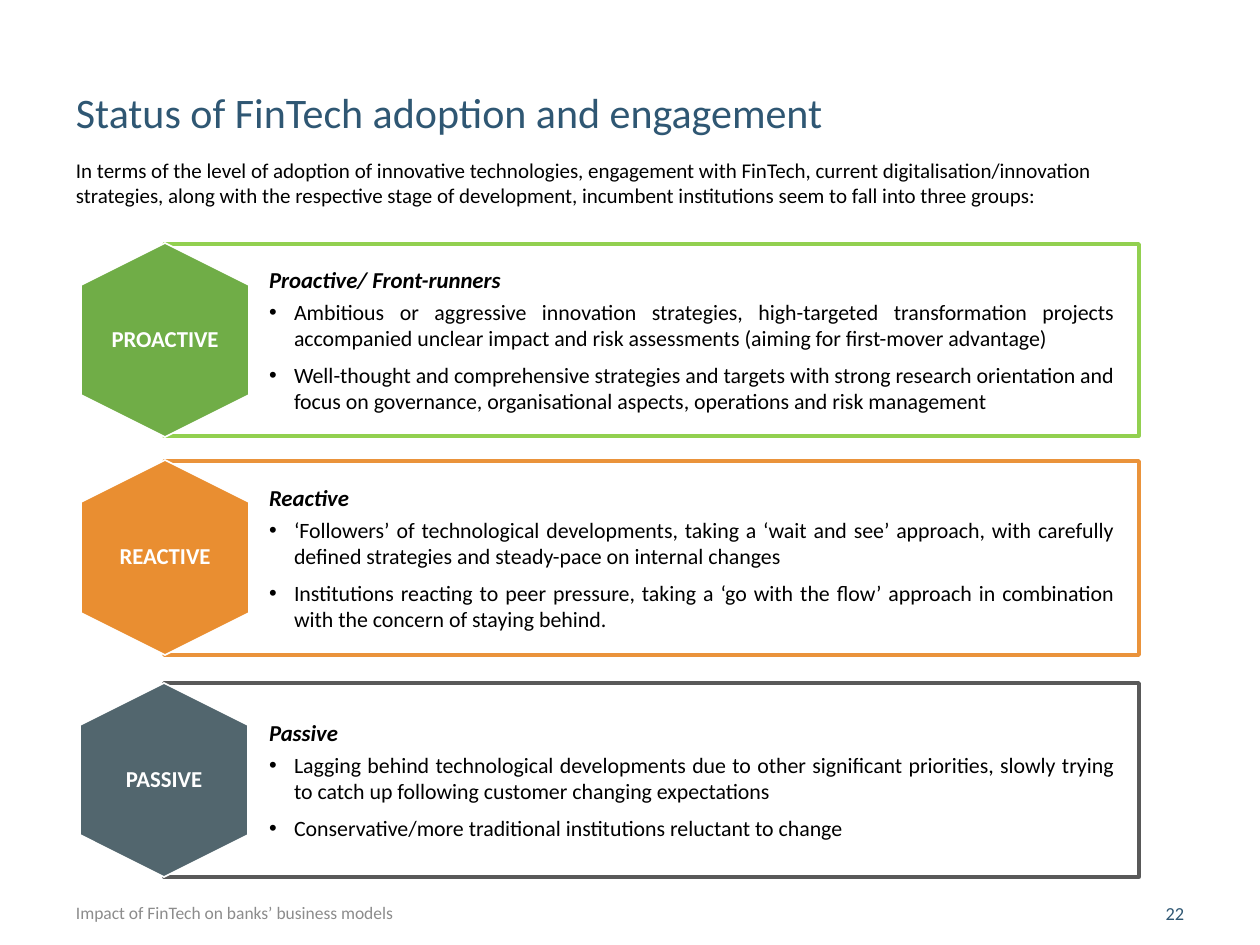
import pptx
import pptx.util
from pptx.dml.color import RGBColor
from pptx.enum.shapes import MSO_SHAPE
from pptx.enum.text import MSO_ANCHOR, PP_ALIGN
from lxml import etree

PX = 914400 / 126
FONT = "Calibri"
WHITE = RGBColor(0xFF, 0xFF, 0xFF)
BLACK = RGBColor(0, 0, 0)
NAVY = RGBColor(0x2F, 0x57, 0x73)
GREY = RGBColor(0x8C, 0x8C, 0x8C)
GREEN = RGBColor(0x70, 0xAD, 0x47)
LIME = RGBColor(0x92, 0xD0, 0x50)
ORANGE = RGBColor(0xE9, 0x8E, 0x31)
AMBER = RGBColor(0xEA, 0x93, 0x3B)
SLATE = RGBColor(0x52, 0x66, 0x6E)
CHARCOAL = RGBColor(0x59, 0x59, 0x59)

TITLE = "Status of FinTech adoption and engagement"
INTRO = ("In terms of the level of adoption of innovative technologies, engagement with FinTech, "
         "current digitalisation/innovation strategies, along with the respective stage of "
         "development, incumbent institutions seem to fall into three groups:")
FOOTER = "Impact of FinTech on banks’ business models"
PAGE_NUMBER = "22"

GROUPS = [
    {"label": "PROACTIVE", "fill": GREEN, "outline": LIME, "heading": "Proactive/ Front-runners",
     "panel": (244, 192), "hexagon": (81, 243, 194),
     "points": ["Ambitious or aggressive innovation strategies, high-targeted transformation projects "
                "accompanied unclear impact and risk assessments (aiming for first-mover advantage)",
                "Well-thought and comprehensive strategies and targets with strong research orientation "
                "and focus on governance, organisational aspects, operations and risk management"]},
    {"label": "REACTIVE", "fill": ORANGE, "outline": AMBER, "heading": "Reactive",
     "panel": (461, 194), "hexagon": (81, 460, 195),
     "points": ["‘Followers’ of technological developments, taking a ‘wait and see’ approach, with "
                "carefully defined strategies and steady-pace on internal changes",
                "Institutions reacting to peer pressure, taking a ‘go with the flow’ approach in "
                "combination with the concern of staying behind."]},
    {"label": "PASSIVE", "fill": SLATE, "outline": CHARCOAL, "heading": "Passive",
     "panel": (683, 194), "hexagon": (80, 683, 194),
     "points": ["Lagging behind technological developments due to other significant priorities, slowly "
                "trying to catch up following customer changing expectations",
                "Conservative/more traditional institutions reluctant to change"]},
]
PANEL_LEFT, PANEL_WIDTH = 164, 975
HEX_WIDTH, HEX_SHOULDER = 168, 42
BULLET_INDENT = 25


def emu(px):
    return round(px * PX)


def apply(target, formats):
    for name, value in formats.items():
        setattr(target, name, value)


def set_frame(shape, anchor, insets=(13, 6, 13, 6)):
    frame = shape.text_frame
    sides = ("margin_left", "margin_top", "margin_right", "margin_bottom")
    apply(frame, dict(zip(sides, map(emu, insets)), word_wrap=True, vertical_anchor=anchor))
    return frame


def write(para, text, size, color, bold=False, italic=False, **formats):
    apply(para, formats)
    span = para.add_run()
    span.text = text
    apply(span.font, {"name": FONT, "size": pptx.util.Pt(size), "bold": bold, "italic": italic})
    span.font.color.rgb = color


def paint(shape, fill, outline=None, weight=1):
    shape.shadow.inherit = False
    shape.fill.solid()
    shape.fill.fore_color.rgb = fill
    if outline is None:
        shape.line.fill.background()
    else:
        shape.line.color.rgb = outline
        shape.line.width = pptx.util.Pt(weight)


def add_bullet(para):
    props = para._p.get_or_add_pPr()
    props.set("marL", str(emu(BULLET_INDENT)))
    props.set("indent", str(-emu(BULLET_INDENT)))
    for tag, key, value in (("buFont", "typeface", "Arial"), ("buChar", "char", "•")):
        etree.SubElement(props, pptx.oxml.ns.qn("a:" + tag)).set(key, value)


def add_label(page, area, text, size, color, align=PP_ALIGN.LEFT):
    box = page.shapes.add_textbox(*map(emu, area))
    frame = set_frame(box, MSO_ANCHOR.TOP)
    write(frame.paragraphs[0], text, size, color, alignment=align)


def add_panel(page, group):
    top, height = group["panel"]
    area = (PANEL_LEFT, top, PANEL_WIDTH, height)
    panel = page.shapes.add_shape(MSO_SHAPE.RECTANGLE, *map(emu, area))
    paint(panel, WHITE, group["outline"], 2)
    frame = set_frame(panel, MSO_ANCHOR.MIDDLE, (105, 25, 25, 25))
    write(frame.paragraphs[0], group["heading"], 13, BLACK, True, True, alignment=PP_ALIGN.JUSTIFY)
    for point in group["points"]:
        para = frame.add_paragraph()
        add_bullet(para)
        write(para, point, 12.5, BLACK, alignment=PP_ALIGN.JUSTIFY,
              space_before=pptx.util.Pt(3), space_after=pptx.util.Pt(3))


def add_hexagon(page, group):
    left, top, height = group["hexagon"]
    middle, right, bottom = left + HEX_WIDTH // 2, left + HEX_WIDTH, top + height
    upper, lower = top + HEX_SHOULDER, bottom - HEX_SHOULDER
    builder = page.shapes.build_freeform(middle, top, scale=PX)
    builder.add_line_segments([(right, upper), (right, lower), (middle, bottom),
                               (left, lower), (left, upper)], close=True)
    hexagon = builder.convert_to_shape()
    paint(hexagon, group["fill"], WHITE)
    frame = set_frame(hexagon, MSO_ANCHOR.MIDDLE, (29, 33, 29, 33))
    write(frame.paragraphs[0], group["label"], 13, WHITE, True, alignment=PP_ALIGN.CENTER,
          line_spacing=0.9, space_after=pptx.util.Pt(6.3))


def main():
    deck = pptx.Presentation()
    apply(deck, {"slide_width": emu(1260), "slide_height": emu(945)})
    page = deck.slides.add_slide(deck.slide_layouts[6])

    add_label(page, (63, 81, 971, 77), TITLE, 24, NAVY)
    intro = page.shapes.add_shape(MSO_SHAPE.RECTANGLE, *map(emu, (63, 154, 1077, 58)))
    paint(intro, WHITE)
    frame = set_frame(intro, MSO_ANCHOR.MIDDLE)
    write(frame.paragraphs[0], INTRO, 12, BLACK, alignment=PP_ALIGN.LEFT)

    for group in GROUPS:
        add_panel(page, group)
        add_hexagon(page, group)

    add_label(page, (63, 896, 678, 30), FOOTER, 10, GREY)
    add_label(page, (1090, 896, 107, 30), PAGE_NUMBER, 10.5, NAVY, PP_ALIGN.RIGHT)
    deck.save("out.pptx")


if __name__ == "__main__":
    main()
